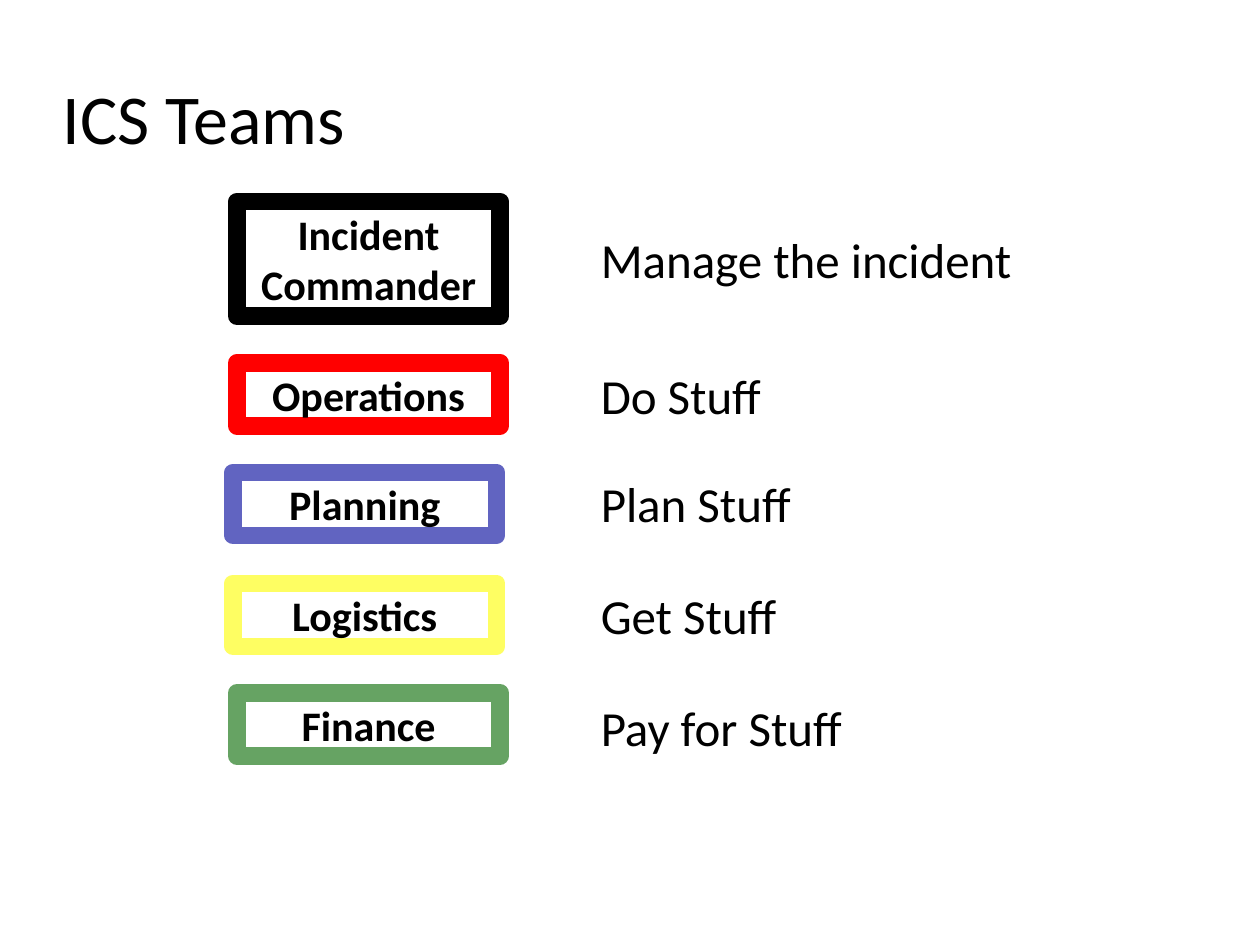
"""Build the ICS Teams slide: five framed team names, each with its task."""
from pptx import Presentation, util as u
from pptx.dml.color import RGBColor
from pptx.enum import shapes, text

COLORS = {
    "ink": "000000",
    "command": "000000",
    "operations": "FF0000",
    "planning": "6164C1",
    "logistics": "FEFE62",
    "finance": "66A363",
}
COLUMNS, ROWS = 100, 75
TEAM_WIDTH, TASK_LEFT, TASK_HEIGHT = 20.9, 46.7, 5.7

TEAMS = [
    ("command", "Incident\nCommander", 18.8, 16, 9.1, "Manage the incident", 17.7, 36.9),
    ("operations", "Operations", 18.8, 28.8, 5, "Do Stuff", 28.5, 27.3),
    ("planning", "Planning", 18.5, 37.5, 5, "Plan Stuff", 37.1, 27.3),
    ("logistics", "Logistics", 18.5, 46.3, 5, "Get Stuff", 46, 27.3),
    ("finance", "Finance", 18.8, 55, 5, "Pay for Stuff", 54.9, 27.3),
]


class SlideBuilder:
    """Hold the slide and its style; place elements on a grid."""

    font = "Calibri"

    def __init__(self, deck):
        self.deck = deck
        self.slide = deck.slides.add_slide(deck.slide_layouts[6])

    def box(self, left, top, width, height):
        column = self.deck.slide_width / COLUMNS
        row = self.deck.slide_height / ROWS
        return [round(n) for n in (left * column, top * row, width * column, height * row)]

    def color(self, key):
        return RGBColor.from_string(COLORS[key])

    def fill_text(self, frame, words, size, bold=False, align=text.PP_ALIGN.LEFT):
        frame.word_wrap = True
        frame.text = words
        for paragraph in frame.paragraphs:
            paragraph.alignment = align
            paragraph.font.name = self.font
            paragraph.font.size = u.Pt(size)
            paragraph.font.bold = bold
            paragraph.font.color.rgb = self.color("ink")

    def title(self, words, *place):
        frame = self.slide.shapes.add_textbox(*self.box(*place)).text_frame
        frame.margin_left = frame.margin_right = frame.margin_top = frame.margin_bottom = 0
        frame.vertical_anchor = text.MSO_ANCHOR.MIDDLE
        self.fill_text(frame, words, 40)
        frame.paragraphs[0].line_spacing = 0.9

    def task(self, words, *place):
        frame = self.slide.shapes.add_textbox(*self.box(*place)).text_frame
        self.fill_text(frame, words, 28)
        frame.auto_size = text.MSO_AUTO_SIZE.SHAPE_TO_FIT_TEXT

    def team(self, words, border, *place):
        badge = self.slide.shapes.add_shape(shapes.MSO_SHAPE.RECTANGLE, *self.box(*place))
        badge.shadow.inherit = False
        badge.fill.background()
        badge.line.color.rgb = self.color(border)
        badge.line.width = u.Pt(10)
        frame = badge.text_frame
        frame.vertical_anchor = text.MSO_ANCHOR.MIDDLE
        self.fill_text(frame, words, 24, True, text.PP_ALIGN.CENTER)
        frame.auto_size = text.MSO_AUTO_SIZE.SHAPE_TO_FIT_TEXT


def main():
    deck = Presentation()
    deck.slide_width, deck.slide_height = u.Inches(10), u.Inches(7.5)
    builder = SlideBuilder(deck)
    builder.title("ICS Teams", 5, 4, 90, 11.4)
    for border, team, left, top, height, task, task_top, task_width in TEAMS:
        builder.team(team, border, left, top, TEAM_WIDTH, height)
        builder.task(task, TASK_LEFT, task_top, task_width, TASK_HEIGHT)
    deck.save("out.pptx")


if __name__ == "__main__":
    main()
